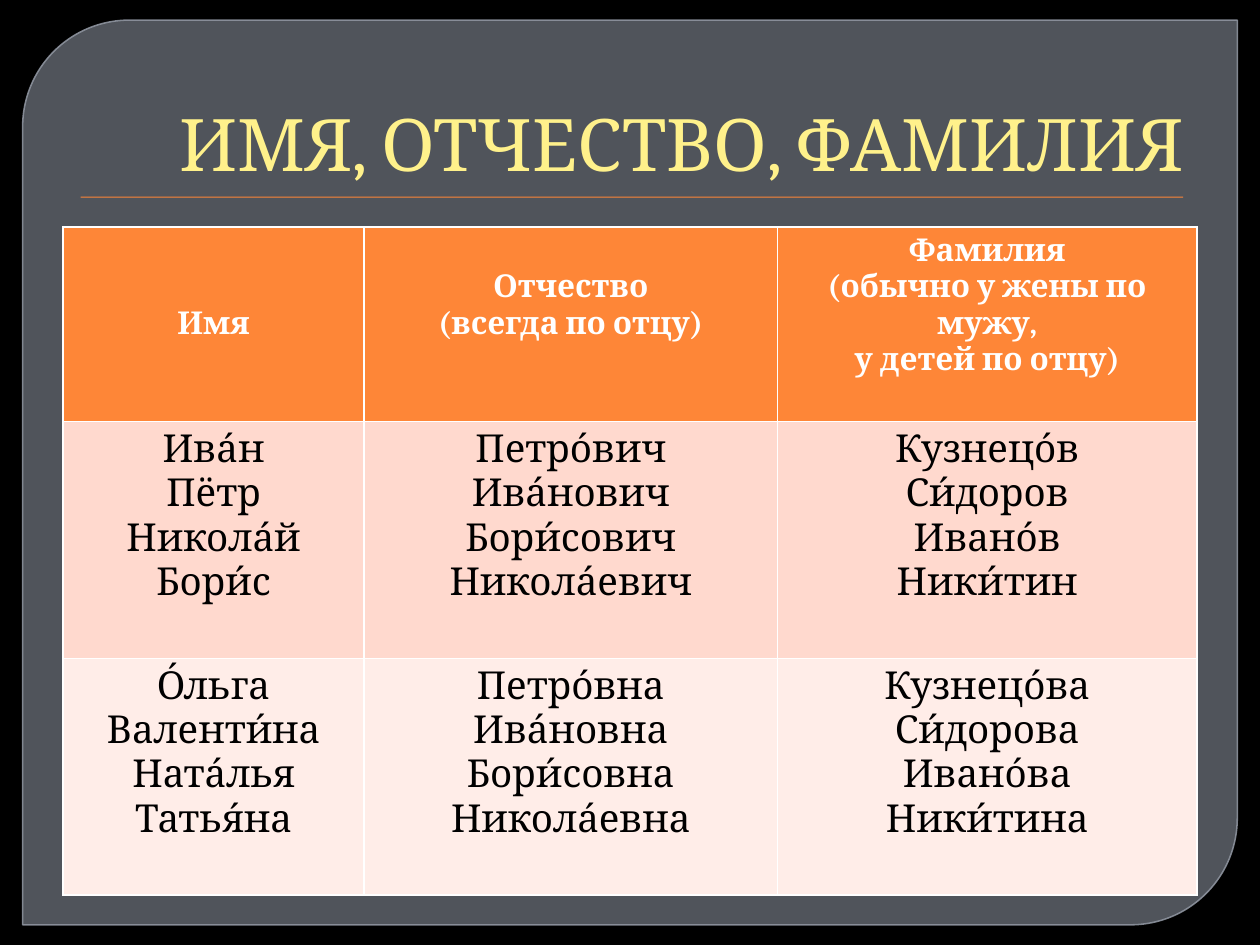
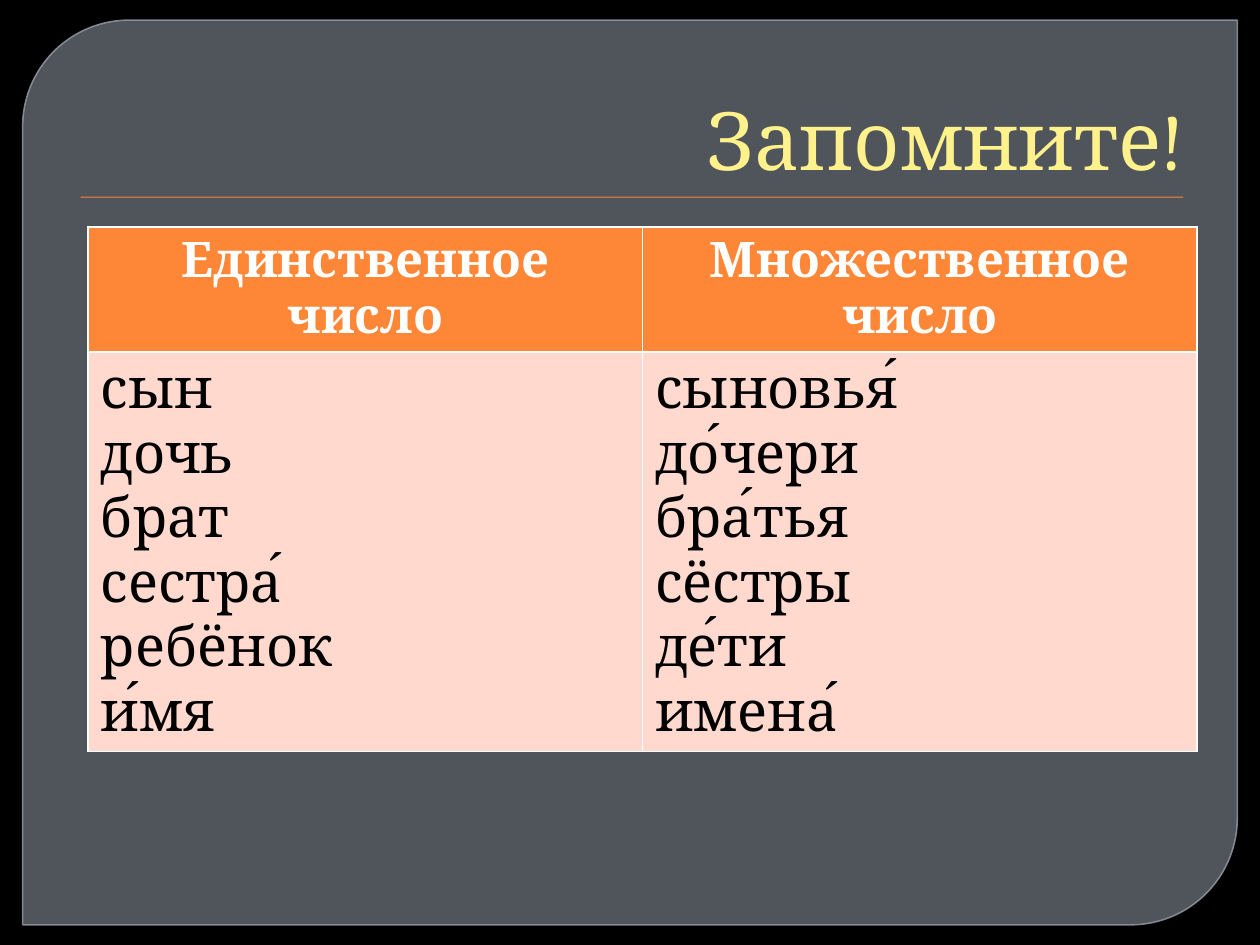
from lxml import etree
from pptx import Presentation
from pptx.dml.color import RGBColor
from pptx.enum.shapes import MSO_SHAPE as SHAPE
from pptx.enum.text import MSO_ANCHOR as ANCHOR, MSO_AUTO_SIZE as AUTO_SIZE, PP_ALIGN as ALIGN
from pptx.oxml.ns import qn
from pptx.util import Inches, Pt

COLORS = {
    "background": "000000",
    "panel": "7C828D",
    "panel_line": "9096A1",
    "orange": "FE8637",
    "title": "FFF18B",
    "header_text": "FFFFFF",
    "body_text": "000000",
}
ROW_FILLS = [COLORS["orange"], "FFD9CE", "FFEDE8"]
FONT = "Cambria"
STRESS = "́"


def write_text(text_frame, text, size, color, bold=False, align=ALIGN.CENTER, stress_font=FONT):
    """Write one paragraph per line, with stress marks in their own font."""
    for index, line in enumerate(text.split("\n")):
        paragraph = text_frame.paragraphs[0] if index == 0 else text_frame.add_paragraph()
        paragraph.alignment = align
        pieces = [line]
        if stress_font != FONT:
            pieces = [piece for piece in line.partition(STRESS) if piece]
        for piece in pieces:
            run = paragraph.add_run()
            run.text = piece
            run.font.name = stress_font if piece == STRESS else FONT
            run.font.size = Pt(size)
            run.font.bold = bold
            run.font.color.rgb = RGBColor.from_string(color)


def set_opacity(fill, percent):
    color = fill._xPr.find(qn("a:solidFill"))[0]
    etree.SubElement(color, qn("a:alpha")).set("val", str(percent * 1000))


SLIDES = [
    {
        "title": "ИМЯ, ОТЧЕСТВО, ФАМИЛИЯ",
        "title_size": 41.4,
        "left": 0.5,
        "columns": [2.39, 3.28, 3.33],
        "rows": [1.54, 1.88, 1.88],
        "header_size": 18,
        "header_anchor": ANCHOR.MIDDLE,
        "header_bottoms": [0.05, 0.34, 0.34],
        "body": {"size": 22},
        "cells": [
            ["Имя", "Отчество\n(всегда по отцу)",
             "Фамилия\n(обычно у жены по мужу,\nу детей по отцу)"],
            ["Ива́н\nПётр\nНикола́й\nБори́с",
             "Петро́вич\nИва́нович\nБори́сович\nНикола́евич",
             "Кузнецо́в\nСи́доров\nИвано́в\nНики́тин"],
            ["О́льга\nВаленти́на\nНата́лья\nТатья́на",
             "Петро́вна\nИва́новна\nБори́совна\nНикола́евна",
             "Кузнецо́ва\nСи́дорова\nИвано́ва\nНики́тина"],
        ],
    },
    {
        "title": "Запомните!",
        "title_size": 46,
        "left": 0.7,
        "columns": [4.4, 4.4],
        "rows": [0.98, 3.17],
        "header_size": 28,
        "header_anchor": ANCHOR.TOP,
        "header_bottoms": [0.05, 0.05],
        "body": {"size": 32, "align": ALIGN.LEFT, "stress_font": "Times New Roman"},
        "cells": [
            ["Единственное число", "Множественное число"],
            ["сын\nдочь\nбрат\nсестра́\nребёнок\nи́мя",
             "сыновья́\nдо́чери\nбра́тья\nсёстры\nде́ти\nимена́"],
        ],
    },
]

presentation = Presentation()
presentation.slide_width = Inches(10)
presentation.slide_height = Inches(7.5)
layout = presentation.slide_layouts[5]
slides = [presentation.slides.add_slide(layout) for _ in SLIDES]

# Shared layout: background and title position
layout.background.fill.solid()
layout.background.fill.fore_color.rgb = RGBColor.from_string(COLORS["background"])
layout_title = layout.placeholders[0]
layout_title.left, layout_title.top = Inches(0.5), Inches(0.28)
layout_title.width, layout_title.height = Inches(9), Inches(1.25)

# Shared layout: panel and rule, drawn once and moved behind the title
shapes = slides[0].shapes
panel = shapes.add_shape(SHAPE.ROUND_2_DIAG_RECTANGLE,
                         Inches(0.18), Inches(0.16), Inches(9.64), Inches(7.18))
panel.adjustments[0] = 0.118
panel.adjustments[1] = 0
panel.line.color.rgb = RGBColor.from_string(COLORS["panel_line"])
panel.line.width = Pt(0.87)
rule = shapes.add_shape(SHAPE.RECTANGLE, Inches(0.64), Inches(1.56), Inches(8.75), Inches(0.01))
rule.line.fill.background()
for position, (shape, color) in enumerate([(panel, "panel"), (rule, "orange")], start=2):
    shape.shadow.inherit = False
    shape.fill.solid()
    shape.fill.fore_color.rgb = RGBColor.from_string(COLORS[color])
    layout.shapes._spTree.insert(position, shape._element)
set_opacity(panel.fill, 65)
set_opacity(panel.line.fill, 88)

for slide, content in zip(slides, SLIDES):
    # Title
    title_frame = slide.shapes.title.text_frame
    title_frame.auto_size = AUTO_SIZE.NONE
    title_frame.vertical_anchor = ANCHOR.BOTTOM
    write_text(title_frame, content["title"], content["title_size"], COLORS["title"],
               align=ALIGN.RIGHT)

    # Table
    columns, rows = content["columns"], content["rows"]
    table = slide.shapes.add_table(len(rows), len(columns), Inches(content["left"]), Inches(1.8),
                                   Inches(sum(columns)), Inches(sum(rows))).table
    for column, width in zip(table.columns, columns):
        column.width = Inches(width)
    for row_index, height in enumerate(rows):
        table.rows[row_index].height = Inches(height)
        for column_index, text in enumerate(content["cells"][row_index]):
            cell = table.cell(row_index, column_index)
            cell.fill.solid()
            cell.fill.fore_color.rgb = RGBColor.from_string(ROW_FILLS[row_index])
            if row_index == 0:
                cell.vertical_anchor = content["header_anchor"]
                cell.margin_bottom = Inches(content["header_bottoms"][column_index])
                write_text(cell.text_frame, text, content["header_size"],
                           COLORS["header_text"], bold=True)
            else:
                write_text(cell.text_frame, text, color=COLORS["body_text"], **content["body"])

presentation.save("out.pptx")
